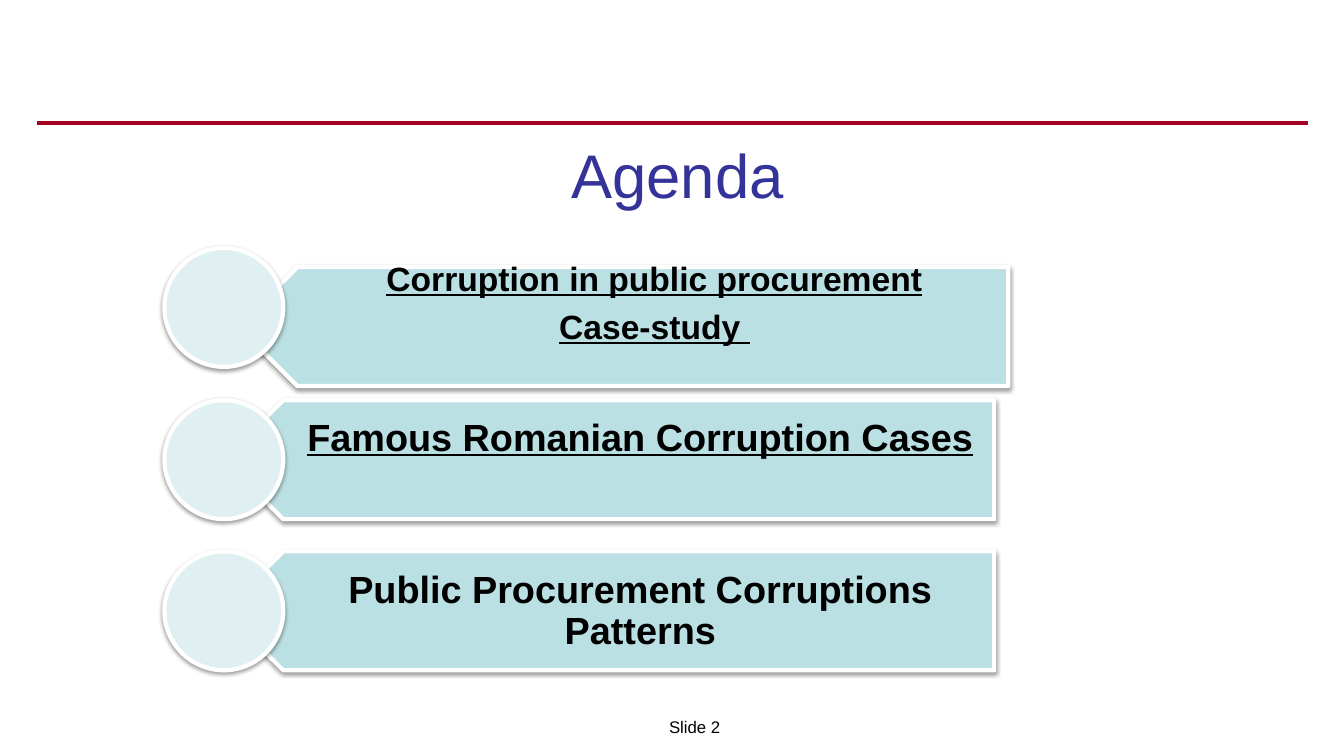
from lxml.etree import SubElement
from pptx import Presentation
from pptx.dml.color import RGBColor
from pptx.enum.shapes import MSO_SHAPE
from pptx.enum.text import MSO_ANCHOR, PP_ALIGN
from pptx.oxml.ns import qn
from pptx.util import Inches, Pt

ROW_HEIGHT = 1.18
BANNER_WIDTH = 7.64


def color(hex_string):
    """Turn a hex string into a colour."""
    return RGBColor.from_string(hex_string)


def add_text(page, place, lines, size, hex_string="000000", bold=False,
             underline=False, spacing=1.0, gap=0, insets=(0.1, 0.05, 0.1, 0.05)):
    """Add a centred text box with one paragraph per line."""
    box = page.shapes.add_textbox(*map(Inches, place))
    frame = box.text_frame
    frame.word_wrap = True
    frame.vertical_anchor = MSO_ANCHOR.MIDDLE
    (frame.margin_left, frame.margin_top,
     frame.margin_right, frame.margin_bottom) = map(Inches, insets)
    frame.text = "\n".join(lines)
    for index, para in enumerate(frame.paragraphs):
        para.alignment = PP_ALIGN.CENTER
        para.line_spacing = spacing
        para.space_before = Pt(gap if index else 0)
        for span in para.runs:
            span.font.name = "Arial"
            span.font.size = Pt(size)
            span.font.bold = bold
            span.font.underline = underline
            span.font.color.rgb = color(hex_string)


def add_header_table(page, place, hex_string):
    """Add a one-cell table with only a top border."""
    table = page.shapes.add_table(1, 1, *map(Inches, place)).table
    table.first_row = table.horz_banding = False
    cell = table.cell(0, 0)
    properties = cell._tc.get_or_add_tcPr()
    for side in ("lnL", "lnR", "lnT", "lnB"):
        border = SubElement(properties, qn(f"a:{side}"), w=str(Pt(3)))
        if side == "lnT":
            paint = SubElement(border, qn("a:solidFill"))
            SubElement(paint, qn("a:srgbClr"), val=hex_string)
        else:
            SubElement(border, qn("a:noFill"))
    cell.fill.background()


def add_raised_shape(page, kind, place, fill, rotation=0):
    """Add a white-edged shape with a soft shadow below it."""
    shape = page.shapes.add_shape(kind, *map(Inches, place))
    shape.rotation = rotation
    shape.fill.solid()
    shape.fill.fore_color.rgb = color(fill)
    shape.line.color.rgb = color("FFFFFF")
    shape.line.width = Pt(3)
    shape.shadow.inherit = False
    effects = shape._element.spPr.find(qn("a:effectLst"))
    shadow = SubElement(effects, qn("a:outerShdw"), blurRad=str(Pt(3.1)),
                        dist=str(Pt(1.6)), dir="5400000", rotWithShape="0")
    black = SubElement(shadow, qn("a:srgbClr"), val="000000")
    SubElement(black, qn("a:alpha"), val="38000")


def add_agenda_row(page, circle_top, lines, size, banner_left=2.22, banner_drop=0,
                   bottom_inset=0.1, **style):
    """Add one agenda item: banner, wording and circle."""
    top = circle_top + banner_drop
    add_raised_shape(page, MSO_SHAPE.PENTAGON,
                     (banner_left, top, BANNER_WIDTH, ROW_HEIGHT), "BBE0E3", 180)
    add_text(page, (banner_left + 0.3, top, BANNER_WIDTH - 0.29, ROW_HEIGHT), lines, size,
             bold=True, insets=(0.52, 0.11, 0.21, bottom_inset), **style)
    add_raised_shape(page, MSO_SHAPE.OVAL,
                     (1.63, circle_top, ROW_HEIGHT, ROW_HEIGHT), "E0F0F2")


def main():
    """Build and save the agenda slide."""
    deck = Presentation()
    deck.slide_width, deck.slide_height = Inches(13.33), Inches(7.5)
    page = deck.slides.add_slide(deck.slide_layouts[6])
    add_header_table(page, (0.37, 1.22, 12.6, 0.57), "A50021")
    add_text(page, (4.78, 7.06, 4.22, 0.31), ["Slide 2"], 12)
    add_text(page, (0.78, 1.3, 11.88, 0.86), ["Agenda"], 44, "333399")
    add_agenda_row(page, 2.46, ["Corruption in public procurement", "Case-study "], 24,
                   banner_left=2.36, banner_drop=0.19, bottom_inset=0.55,
                   underline=True, spacing=0.9, gap=8.4)
    add_agenda_row(page, 3.97, ["Famous Romanian Corruption Cases"], 27,
                   bottom_inset=0.58, underline=True)
    add_agenda_row(page, 5.47, ["Public Procurement Corruptions Patterns"], 27, spacing=0.9)
    deck.save("out.pptx")


if __name__ == "__main__":
    main()
